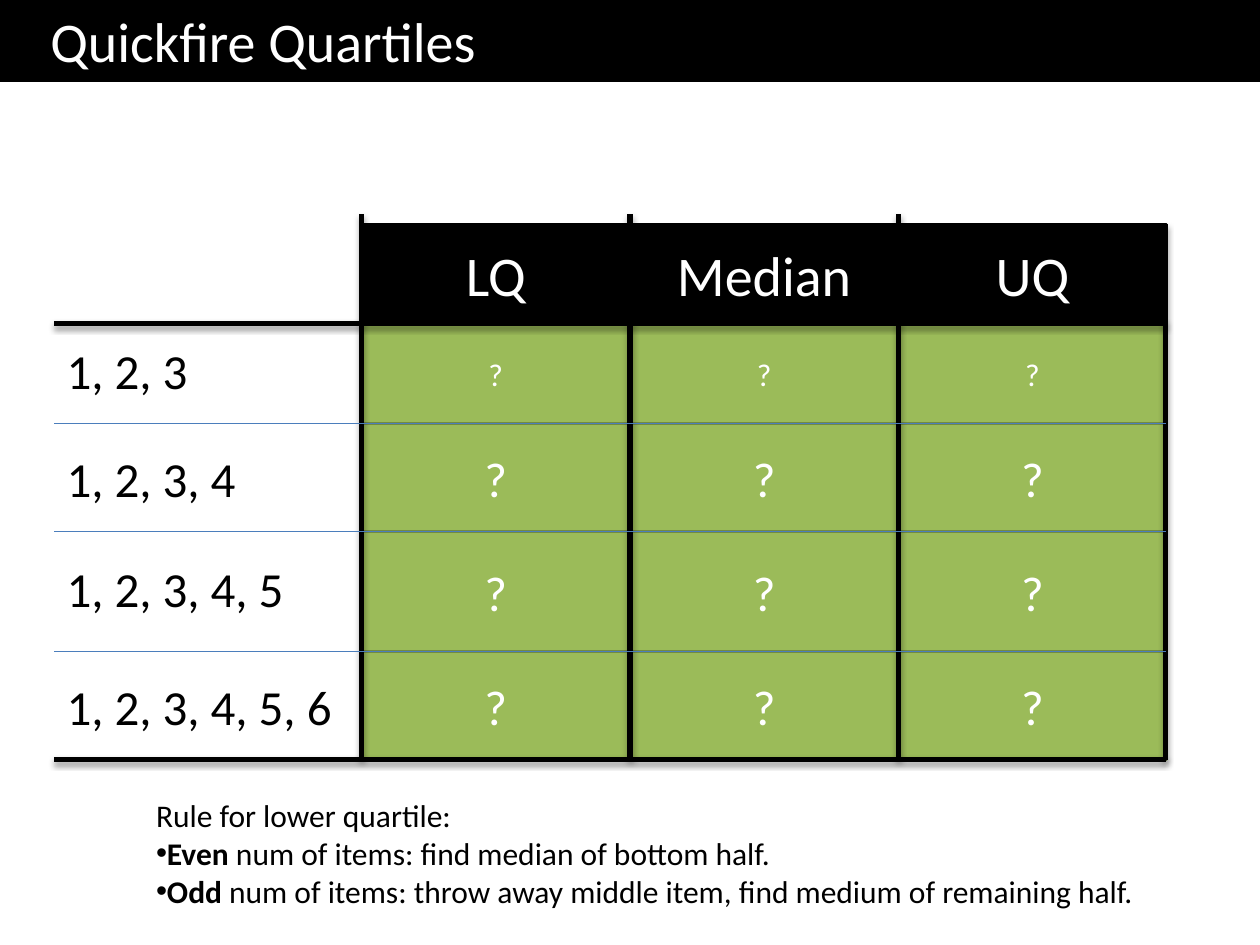
from lxml import etree
from pptx import Presentation
from pptx.dml.color import RGBColor
from pptx.enum import shapes, text
from pptx.oxml.ns import qn
from pptx.util import Inches, Pt

BLACK, WHITE, GREEN, OLIVE, BLUE = "000000", "FFFFFF", "9BBB59", "738A42", "4B7EBC"
LEFT, RIGHT = 0.43, 9.25
COLUMN_LEFT, COLUMN_WIDTH = 2.87, 2.13
HEADER_TOP, HEADER_HEIGHT = 1.78, 0.79
HEADINGS = ["LQ", "Median", "UQ"]
ROW_EDGES = [2.57, 3.36, 4.22, 5.17, 6.03]
ROWS = [
    ("1, 2, 3", 2.65, 1.5, 18),
    ("1, 2, 3, 4", 3.51, 2.05, 28),
    ("1, 2, 3, 4, 5", 4.38, 2.05, 28),
    ("1, 2, 3, 4, 5, 6", 5.32, 2.36, 28),
]
RULES = [
    ("Even", " num of items: find median of bottom half."),
    ("Odd", " num of items: throw away middle item, find medium of remaining half."),
]


def rgb(color):
    return RGBColor.from_string(color)


def add_run(paragraph, words, size=18, color=BLACK, bold=False):
    run = paragraph.add_run()
    run.text = words
    run.font.name = "Calibri"
    run.font.size = Pt(size)
    run.font.bold = bold
    run.font.color.rgb = rgb(color)


def add_box(slide, words, left, top, width, height, fill, line, size,
            align=text.PP_ALIGN.CENTER, inset=0.1):
    box = slide.shapes.add_shape(shapes.MSO_SHAPE.RECTANGLE, Inches(left), Inches(top),
                                 Inches(width), Inches(height))
    box.shadow.inherit = False
    box.fill.solid()
    box.fill.fore_color.rgb = rgb(fill)
    box.line.color.rgb = rgb(line)
    box.line.width = Pt(2)
    frame = box.text_frame
    frame.word_wrap = True
    frame.margin_left = Inches(inset)
    frame.vertical_anchor = text.MSO_ANCHOR.MIDDLE
    frame.paragraphs[0].alignment = align
    add_run(frame.paragraphs[0], words, size=size, color=WHITE)


def add_label(slide, words, left, top, width, height, size):
    frame = slide.shapes.add_textbox(Inches(left), Inches(top), Inches(width),
                                     Inches(height)).text_frame
    frame.word_wrap = True
    frame.auto_size = text.MSO_AUTO_SIZE.SHAPE_TO_FIT_TEXT
    add_run(frame.paragraphs[0], words, size=size)
    return frame


def add_line(slide, x1, y1, x2, y2, color=BLACK, width=3, shadow=True):
    rule = slide.shapes.add_connector(shapes.MSO_CONNECTOR.STRAIGHT, Inches(x1), Inches(y1),
                                      Inches(x2), Inches(y2))
    rule.line.color.rgb = rgb(color)
    rule.line.width = Pt(width)
    effects = etree.SubElement(rule._element.spPr, qn("a:effectLst"))
    if shadow:
        outer = etree.SubElement(effects, qn("a:outerShdw"), blurRad=str(Pt(3.1)),
                                 dist=str(Pt(1.8)), dir="5400000", rotWithShape="0")
        tint = etree.SubElement(outer, qn("a:srgbClr"), val=BLACK)
        etree.SubElement(tint, qn("a:alpha"), val="35000")


def add_bullet(frame, lead, rest):
    paragraph = frame.add_paragraph()
    properties = paragraph._p.get_or_add_pPr()
    etree.SubElement(properties, qn("a:buFont"), typeface="Arial")
    etree.SubElement(properties, qn("a:buChar"), char="•")
    add_run(paragraph, lead, bold=True)
    add_run(paragraph, rest)


def main():
    deck = Presentation()
    deck.slide_width, deck.slide_height = Inches(10), Inches(7.5)
    slide = deck.slides.add_slide(deck.slide_layouts[6])
    columns = [COLUMN_LEFT + i * COLUMN_WIDTH for i in range(len(HEADINGS))]
    bottom = ROW_EDGES[-1]

    for (_, _, _, size), top, end in zip(ROWS, ROW_EDGES, ROW_EDGES[1:]):
        for left in columns:
            add_box(slide, "?", left, top, COLUMN_WIDTH, end - top, GREEN, OLIVE, size)

    add_box(slide, "Quickfire Quartiles", 0, 0, 10, 0.64, BLACK, BLACK, 32,
            align=text.PP_ALIGN.LEFT, inset=0.4)

    for left in columns:
        add_line(slide, left, 1.7, left, bottom)
    add_line(slide, LEFT, ROW_EDGES[0], RIGHT, ROW_EDGES[0])
    for heading, left in zip(HEADINGS, columns):
        add_box(slide, heading, left, HEADER_TOP, COLUMN_WIDTH, HEADER_HEIGHT, BLACK, BLACK, 32)
    add_line(slide, RIGHT, HEADER_TOP, RIGHT, bottom)
    for edge in ROW_EDGES[1:-1]:
        add_line(slide, LEFT, edge, RIGHT, edge, color=BLUE, width=0.75, shadow=False)
    add_line(slide, LEFT, bottom, RIGHT, bottom)

    for numbers, top, width, _ in ROWS:
        add_label(slide, numbers, LEFT, top, width, 0.57, 28)

    rules = add_label(slide, "Rule for lower quartile:", 1.14, 6.27, 8.03, 1.01, 18)
    for lead, rest in RULES:
        add_bullet(rules, lead, rest)

    deck.save("out.pptx")


if __name__ == "__main__":
    main()
